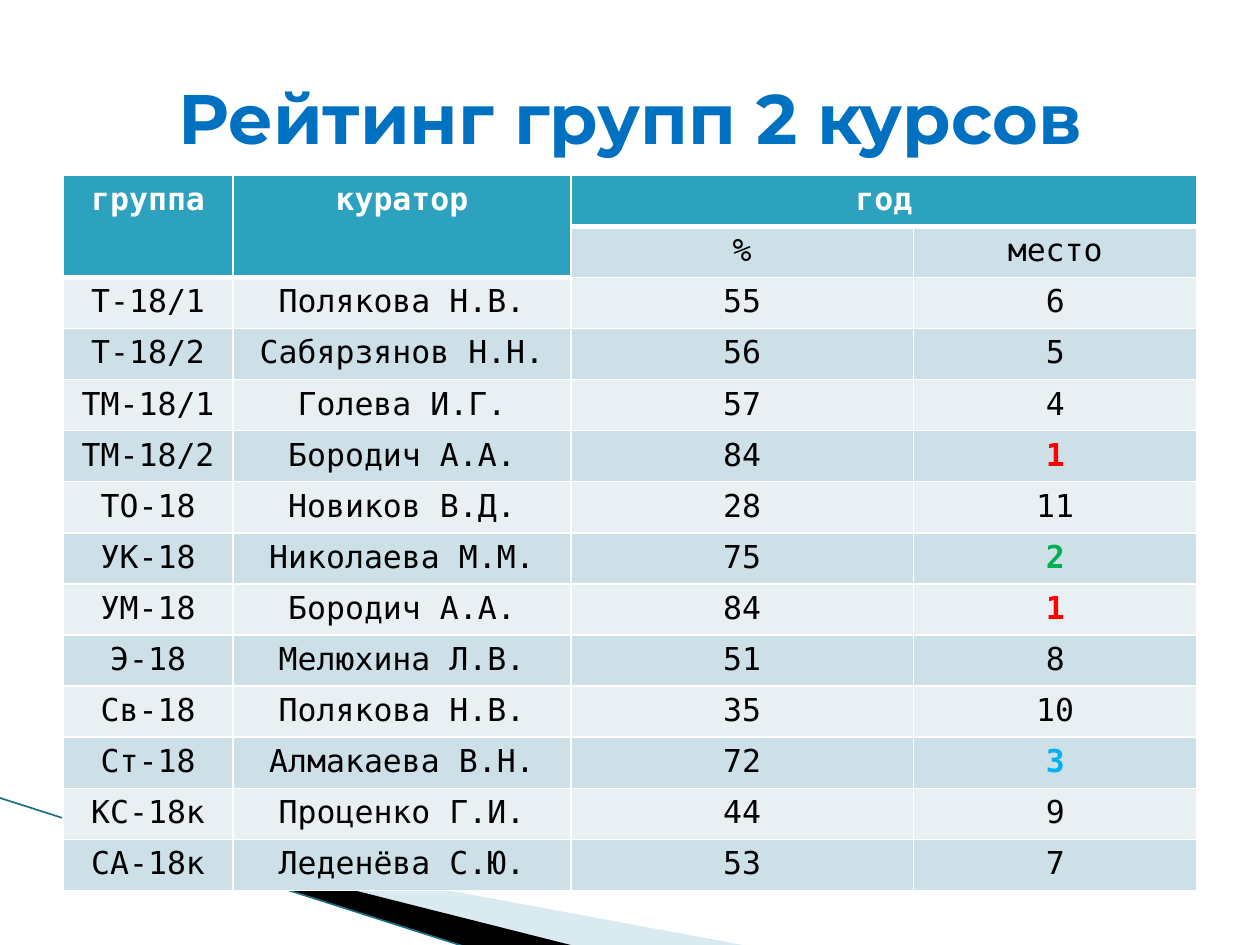
"""Build the slide that ranks the second-year groups."""
from lxml.etree import SubElement
from pptx import Presentation
from pptx.dml.color import RGBColor
from pptx.enum.shapes import MSO_CONNECTOR as Connector
from pptx.enum.text import MSO_ANCHOR as Anchor, PP_ALIGN as Align
from pptx.oxml.ns import qn
from pptx.util import Inches, Pt

PLACE_COLORS = {"1": "FF0000", "2": "00B050", "3": "00B0F0"}
HEADER_FILL, DARK_BAND, LIGHT_BAND = "2DA2BF", "CDE0E8", "E8F0F4"
ROWS = [
    ("группа", "куратор", "год", ""),
    ("", "", "%", "место"),
    ("Т-18/1", "Полякова Н.В.", "55", "6"),
    ("Т-18/2", "Сабярзянов Н.Н.", "56", "5"),
    ("ТМ-18/1", "Голева И.Г.", "57", "4"),
    ("ТМ-18/2", "Бородич А.А.", "84", "1"),
    ("ТО-18", "Новиков В.Д.", "28", "11"),
    ("УК-18", "Николаева М.М.", "75", "2"),
    ("УМ-18", "Бородич А.А.", "84", "1"),
    ("Э-18", "Мелюхина Л.В.", "51", "8"),
    ("Св-18", "Полякова Н.В.", "35", "10"),
    ("Ст-18", "Алмакаева В.Н.", "72", "3"),
    ("КС-18к", "Проценко Г.И.", "44", "9"),
    ("СА-18к", "Леденёва С.Ю.", "53", "7"),
]


def rgb(value):
    return RGBColor.from_string(value)


def add_border(cell, side, width):
    line = SubElement(cell._tc.get_or_add_tcPr(), qn(f"a:ln{side}"), w=str(Pt(width)))
    fill = SubElement(line, qn("a:solidFill"))
    SubElement(fill, qn("a:srgbClr"), val="FFFFFF")


prs = Presentation()
prs.slide_width, prs.slide_height = Inches(10), Inches(7.5)
slide = prs.slides.add_slide(prs.slide_layouts[6])
shapes = slide.shapes

wedges = [
    ("A0CBDC", 40, (0.78, 5.47, 4.16, 1.58),
     [(0.55, 6.51), (5.95, 7.51), (4.56, 7.51), (0.55, 6.5)]),
    ("000000", 100, (-0.06, 6.33, 4.16, 0.92),
     [(0.53, 6.49), (4.57, 7.51), (3.72, 7.52), (0.54, 6.5)]),
]
for color, opacity, frame, corners in wedges:
    points = [(Inches(x), Inches(y)) for x, y in corners]
    builder = shapes.build_freeform(*points[0])
    builder.add_line_segments(points[1:])
    wedge = builder.convert_to_shape()
    left, top, width, height = map(Inches, frame)
    shift_x, shift_y = wedge.left - left, wedge.top - top
    wedge.left, wedge.top, wedge.width, wedge.height = left, top, width, height
    outline = next(wedge._element.iter(qn("a:path")))
    outline.set("w", str(width))
    outline.set("h", str(height))
    for corner in outline.iter(qn("a:pt")):
        corner.set("x", str(int(corner.get("x")) + shift_x))
        corner.set("y", str(int(corner.get("y")) + shift_y))
    wedge.shadow.inherit = False
    wedge.fill.solid()
    wedge.fill.fore_color.rgb = rgb(color)
    wedge.line.fill.background()
    if opacity < 100:
        tint = wedge._element.spPr.find(qn("a:solidFill"))[0]
        SubElement(tint, qn("a:alpha"), val=str(opacity * 1000))

edge = shapes.add_connector(
    Connector.STRAIGHT, Inches(-0.01), Inches(6.33), Inches(3.71), Inches(7.52))
edge.line.color.rgb = rgb("1B6E83")
edge.line.width = Pt(0.95)
SubElement(edge._element.spPr, qn("a:effectLst"))

ranking = shapes.add_table(
    len(ROWS), 4, Inches(0.5), Inches(1.39), Inches(9), Inches(5.68)).table
for column, width in zip(ranking.columns, (1.35, 2.68, 2.72, 2.25)):
    column.width = Inches(width)
for first, last in [((0, 0), (1, 0)), ((0, 1), (1, 1)), ((0, 2), (0, 3))]:
    ranking.cell(*first).merge(ranking.cell(*last))

for r, values in enumerate(ROWS):
    for c, value in enumerate(values):
        cell = ranking.cell(r, c)
        is_header = r == 0 or (r == 1 and c < 2)
        for side in "LRT":
            add_border(cell, side, 1)
        add_border(cell, "B", 3 if is_header else 1)
        cell.fill.solid()
        band = DARK_BAND if r % 2 else LIGHT_BAND
        cell.fill.fore_color.rgb = rgb(HEADER_FILL if is_header else band)
        if not value:
            continue
        cell.text_frame.text = value
        paragraph = cell.text_frame.paragraphs[0]
        paragraph.alignment = Align.CENTER
        place_color = PLACE_COLORS.get(value) if c == 3 else None
        font = paragraph.runs[0].font
        font.name, font.size = "DejaVu Sans Mono", Pt(18)
        font.bold = is_header or place_color is not None
        font.color.rgb = rgb("FFFFFF" if is_header else place_color or "000000")

title = shapes.add_textbox(Inches(0.5), Inches(0.3), Inches(9), Inches(1.25))
title.text_frame.word_wrap = True
title.text_frame.vertical_anchor = Anchor.MIDDLE
title.text_frame.text = "Рейтинг групп 2 курсов"
heading = title.text_frame.paragraphs[0]
heading.alignment = Align.CENTER
font = heading.runs[0].font
font.name, font.size, font.bold = "Montserrat", Pt(40), True
font.color.rgb = rgb("0070C0")

prs.save("out.pptx")
